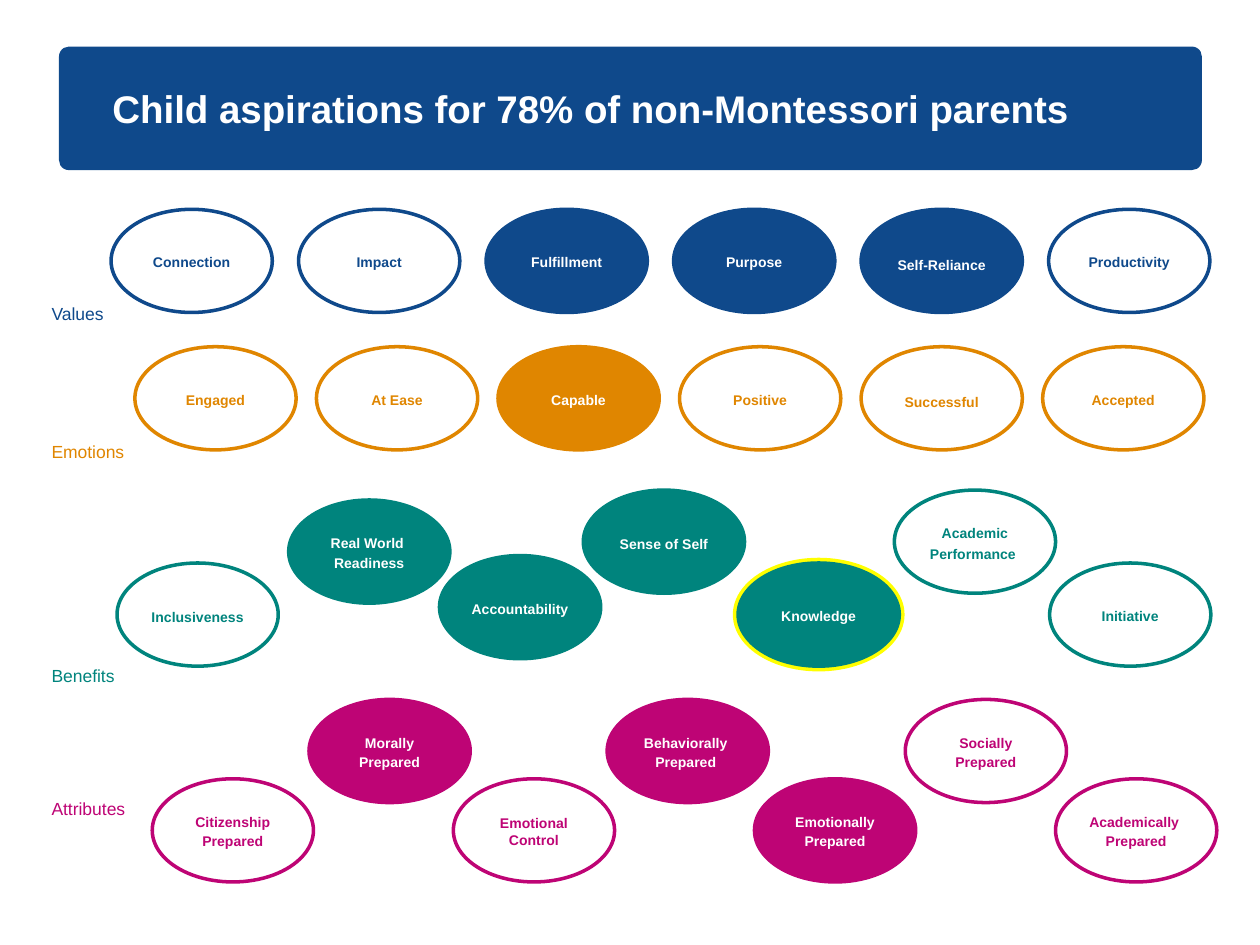
from pptx import Presentation, util as u
from pptx.dml.color import RGBColor
from pptx.enum import shapes, text

COLORS = {
    "values": "0F498B",
    "emotions": "E08600",
    "benefits": "00847D",
    "attributes": "BE0475",
    "halo": "FFFF00",
    "white": "FFFFFF",
}
OVAL_WIDTH, OVAL_HEIGHT = 3.25, 2.08
LABEL_LEFT = 1.04

# Evenly spaced rows: group, first left, step, top, [(wording, filled, line spacing)]
ROWS = [
    ("attributes", 6.23, 6.01, 14.1, [
        ("Morally\nPrepared", True, 11),
        ("Behaviorally \nPrepared ", True, 11),
        ("Socially\nPrepared", False, 11)]),
    ("attributes", 3.07, 6.07, 15.7, [
        ("Citizenship\nPrepared", False, 11),
        ("Emotional\nControl", False, 11),
        ("Emotionally\nPrepared", True, 11),
        ("Academically \nPrepared", False, 11)]),
    ("emotions", 2.72, 3.66, 6.99, [
        ("Engaged", False, 11),
        ("At Ease", False, 11),
        ("Capable", True, 11),
        ("Positive", False, 11),
        ("Successful", False, 14),
        ("Accepted", False, 11)]),
    ("values", 2.24, 3.78, 4.22, [
        ("Connection", False, 11),
        ("Impact", False, 11),
        ("Fulfillment", True, 11),
        ("Purpose", True, 11),
        ("Self-Reliance", True, 14),
        ("Productivity", False, 11)]),
]

# Scattered ovals: left, top, wording, filled, line spacing
BENEFITS = [
    (18.03, 9.88, "Academic\nPerformance ", False, 12),
    (14.88, 11.35, "Knowledge", True, 11),
    (11.76, 9.88, "Sense of Self", True, 12),
    (8.86, 11.2, "Accountability", True, 12),
    (5.82, 10.08, "Real World \nReadiness", True, 11),
    (2.36, 11.35, "Inclusiveness", False, 12),
    (21.16, 11.35, "Initiative", False, 11),
]

# Group labels: group, wording, top, width
LABELS = [
    ("values", "Values", 6.1, 2.59),
    ("emotions", "Emotions", 8.89, 2.59),
    ("benefits", "Benefits", 13.41, 3.61),
    ("attributes", "Attributes", 16.08, 2.97),
]


def rgb(name):
    return RGBColor.from_string(COLORS[name])


def set_margins(frame, side, top):
    frame.margin_left = frame.margin_right = u.Cm(side)
    frame.margin_top = frame.margin_bottom = u.Cm(top)
    frame.vertical_anchor = text.MSO_ANCHOR.MIDDLE


def write(frame, wording, size, color, bold=False, align=text.PP_ALIGN.LEFT):
    frame.text = wording
    for para in frame.paragraphs:
        para.alignment = align
        for span in para.runs:
            span.font.name = "Arial"
            span.font.size = u.Pt(size)
            span.font.bold = bold
            span.font.color.rgb = rgb(color)


def add_shape(page, kind, left, top, width, height, fill=None, line=None, weight=2):
    shape = page.shapes.add_shape(kind, u.Cm(left), u.Cm(top), u.Cm(width), u.Cm(height))
    shape.shadow.inherit = False
    if fill:
        shape.fill.solid()
        shape.fill.fore_color.rgb = rgb(fill)
    else:
        shape.fill.background()
    if line:
        shape.line.color.rgb = rgb(line)
        shape.line.width = u.Pt(weight)
    else:
        shape.line.fill.background()
    return shape


def add_oval(page, group, left, top, wording, filled, spacing):
    oval = add_shape(page, shapes.MSO_SHAPE.OVAL, left, top, OVAL_WIDTH, OVAL_HEIGHT,
                     fill=group if filled else None, line=group)
    frame = oval.text_frame
    set_margins(frame, 0, 0)
    frame.word_wrap = False
    write(frame, wording, 8, "white" if filled else group, True, text.PP_ALIGN.CENTER)
    for para in frame.paragraphs:
        para.line_spacing = u.Pt(spacing)
    return oval


def add_row(page, group, first, step, top, ovals):
    for index, (wording, filled, spacing) in enumerate(ovals):
        oval = add_oval(page, group, first + index * step, top, wording, filled, spacing)
        if wording == "Emotional\nControl":
            oval.text_frame.paragraphs[1].line_spacing = None


def add_label(page, group, wording, top, width):
    box = page.shapes.add_textbox(u.Cm(LABEL_LEFT), u.Cm(top), u.Cm(width), u.Cm(0.43))
    frame = box.text_frame
    set_margins(frame, 0, 0)
    frame.word_wrap = True
    frame.auto_size = text.MSO_AUTO_SIZE.SHAPE_TO_FIT_TEXT
    write(frame, wording, 10, group)


def add_title(page, wording):
    banner = add_shape(page, shapes.MSO_SHAPE.ROUNDED_RECTANGLE,
                       1.19, 0.94, 23.04, 2.49, fill="values")
    banner.adjustments[0] = 0.08
    set_margins(banner.text_frame, 1.02, 0.13)
    banner.text_frame.word_wrap = True
    write(banner.text_frame, wording, 22, "white", True)


def main():
    deck = Presentation()
    deck.slide_width, deck.slide_height = u.Cm(25.4), u.Cm(19.05)
    page = deck.slides.add_slide(deck.slide_layouts[6])

    # Evenly spaced rows of ovals
    for row in ROWS:
        add_row(page, *row)

    # Benefits, with a highlight ring behind Knowledge
    add_shape(page, shapes.MSO_SHAPE.OVAL, 14.88, 11.35, OVAL_WIDTH, OVAL_HEIGHT,
              line="halo", weight=6)
    for benefit in BENEFITS:
        add_oval(page, "benefits", *benefit)

    # Group labels and title banner
    for label in LABELS:
        add_label(page, *label)
    add_title(page, "Child aspirations for 78% of non-Montessori parents")

    deck.save("out.pptx")


if __name__ == "__main__":
    main()
